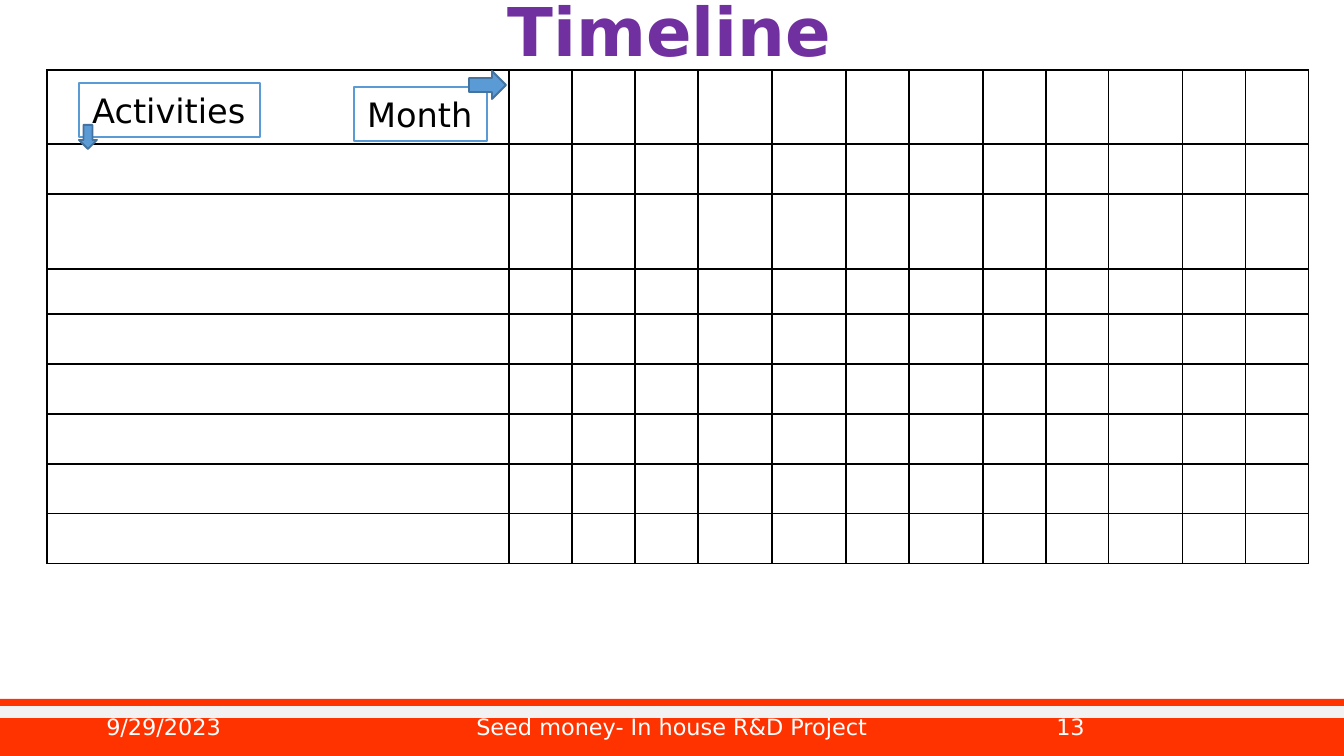
from lxml import etree
from pptx import Presentation
from pptx.dml.color import RGBColor
from pptx.enum.shapes import MSO_CONNECTOR, MSO_SHAPE
from pptx.enum.text import MSO_ANCHOR, PP_ALIGN
from pptx.oxml import parse_xml
from pptx.oxml.ns import nsdecls, qn
from pptx.util import Pt

PX = 914400 / 134.4
FONT = "DejaVu Sans"
RECT, DOWN, RIGHT = MSO_SHAPE.RECTANGLE, MSO_SHAPE.DOWN_ARROW, MSO_SHAPE.RIGHT_ARROW
LEFT, MID, END = PP_ALIGN.LEFT, PP_ALIGN.CENTER, PP_ALIGN.RIGHT

BLACK = RGBColor(0x00, 0x00, 0x00)
WHITE = RGBColor(0xFF, 0xFF, 0xFF)
PALE = RGBColor(0xF2, 0xF2, 0xF2)
ORANGE = RGBColor(0xFF, 0x33, 0x00)
PURPLE = RGBColor(0x70, 0x30, 0xA0)
BLUE = RGBColor(0x5B, 0x9B, 0xD5)
NAVY = RGBColor(0x43, 0x73, 0x9E)

TITLE = ("Timeline", (90, 19, 1159, 31))
FOOTER = [
    ("9/29/2023", (93, 712, 302, 29), LEFT),
    ("Seed money- In house R&D Project", (445, 712, 454, 29), MID),
    ("13", (949, 712, 149, 30), END),
]
LABELS = [
    ("Activities", (79, 83, 181, 54), DOWN, (79, 125, 18, 24)),
    ("Month", (354, 87, 133, 54), RIGHT, (469, 71, 37, 28)),
]
BAND = (-3, 699, 1347, 58)
STRIPE = (-3, 712, 1344, 712)
ORIGIN = (47, 70)
NARROW, WIDE = 63, 74
COLS = [462] + [WIDE if n in (4, 5, 7, 10) else NARROW for n in range(1, 13)]
ROWS = [74, 50, 75, 45] + [50] * 5


def emu(*sizes):
    return [round(size * PX) for size in sizes]


def write(shape, text, size, color, align=LEFT, bold=False, wrap=True):
    frame = shape.text_frame
    frame.text = text
    frame.word_wrap = wrap
    frame.vertical_anchor = MSO_ANCHOR.MIDDLE
    para = frame.paragraphs[0]
    para.alignment = align
    font = para.runs[0].font
    font.name, font.size, font.bold = FONT, Pt(size), bold
    font.color.rgb = color
    return para


def add_text(slide, text, box, *style, **more):
    return write(slide.shapes.add_textbox(*emu(*box)), text, *style, **more)


def add_shape(slide, kind, box, fill=None, line=None, width=1):
    shape = slide.shapes.add_shape(kind, *emu(*box))
    shape.shadow.inherit = False
    if fill is None:
        shape.fill.background()
    else:
        shape.fill.solid()
        shape.fill.fore_color.rgb = fill
    if line is None:
        shape.line.fill.background()
    else:
        shape.line.color.rgb = line
        shape.line.width = Pt(width)
    return shape


def add_stripe(slide):
    line = slide.shapes.add_connector(MSO_CONNECTOR.STRAIGHT, *emu(*STRIPE))
    line.line.color.rgb = PALE
    line.line.width = Pt(6)
    etree.SubElement(line._element.spPr, qn("a:effectLst"))


def rule_cell(cell):
    """Give an empty cell thin black borders and no fill."""
    props = cell._tc.get_or_add_tcPr()
    for side in "LRTB":
        props.append(parse_xml(
            f'<a:ln{side} {nsdecls("a")} w="{Pt(1)}"><a:solidFill>'
            f'<a:srgbClr val="{BLACK}"/></a:solidFill></a:ln{side}>'))
    cell.fill.background()
    cell.margin_top = cell.margin_bottom = 0


def add_grid(slide):
    box = emu(*ORIGIN, sum(COLS), sum(ROWS))
    table = slide.shapes.add_table(len(ROWS), len(COLS), *box).table
    table.first_row = table.horz_banding = False
    for col, width in zip(table.columns, emu(*COLS)):
        col.width = width
    for row, height in zip(table.rows, emu(*ROWS)):
        row.height = height
    for cell in table.iter_cells():
        rule_cell(cell)


def main():
    deck = Presentation()
    deck.slide_width, deck.slide_height = emu(1344, 756)
    slide = deck.slides.add_slide(deck.slide_layouts[6])

    add_shape(slide, RECT, BAND, ORANGE)
    add_stripe(slide)
    add_text(slide, *TITLE, 36, PURPLE, MID, bold=True).line_spacing = 0.9
    for text, box, align in FOOTER:
        add_text(slide, text, box, 12, WHITE, align)

    add_grid(slide)
    for text, box, arrow, spot in LABELS:
        label = add_shape(slide, RECT, box, line=BLUE, width=0.75)
        write(label, text, 18, BLACK, wrap=False)
        add_shape(slide, arrow, spot, BLUE, NAVY)

    deck.save("out.pptx")


if __name__ == "__main__":
    main()
